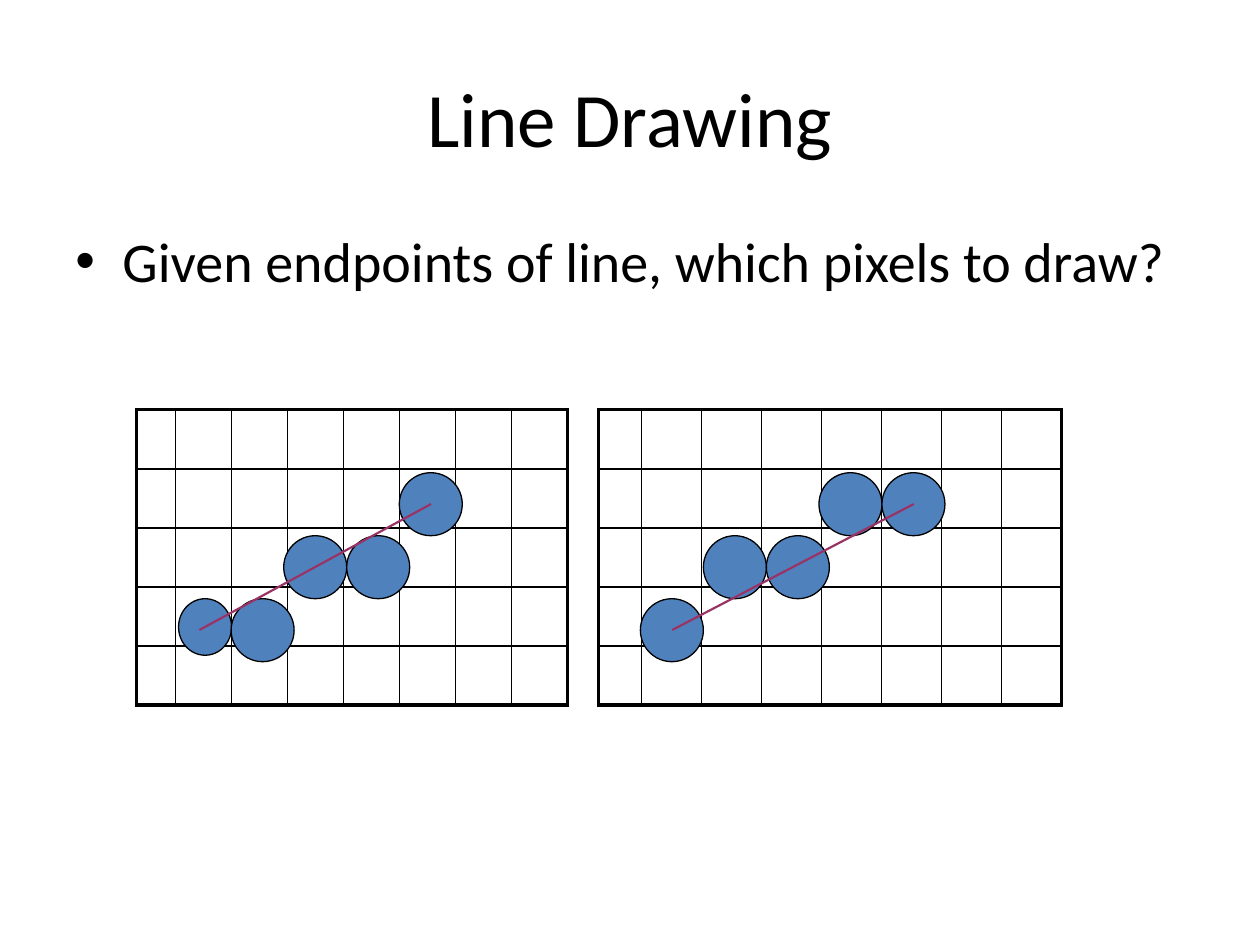
from dataclasses import dataclass

from lxml.etree import SubElement
from pptx import Presentation
from pptx.dml.color import RGBColor
from pptx.enum.shapes import MSO_CONNECTOR, MSO_SHAPE
from pptx.enum.text import MSO_ANCHOR, PP_ALIGN
from pptx.oxml.ns import qn
from pptx.util import Cm, Pt


@dataclass(frozen=True)
class Theme:
    font: str = "Calibri"
    ink: str = "000000"
    pixel: str = "4F81BD"
    line: str = "993366"
    title_size: float = 44
    body_size: float = 32
    body_space: float = 6.4
    frame_width: float = 2.25
    grid_width: float = 1
    outline_width: float = 0.75
    line_width: float = 1.25


theme = Theme()


def add_run(p, text, size):
    r = p.add_run()
    r.text = text
    r.font.name = theme.font
    r.font.size = Pt(size)
    r.font.color.rgb = RGBColor.from_string(theme.ink)


def set_border(cell, side, width):
    ln = SubElement(cell._tc.get_or_add_tcPr(), qn(f"a:ln{side}"), w=str(Pt(width)))
    fill = SubElement(ln, qn("a:solidFill"))
    SubElement(fill, qn("a:srgbClr"), val=theme.ink)


prs = Presentation()
prs.slide_width, prs.slide_height = Cm(25.4), Cm(19.05)
s = prs.slides.add_slide(prs.slide_layouts[5])

title = s.shapes.title
title.left, title.top, title.width, title.height = Cm(1.27), Cm(0.76), Cm(22.86), Cm(3.18)
tf = title.text_frame
tf.vertical_anchor = MSO_ANCHOR.MIDDLE
p = tf.paragraphs[0]
p.alignment = PP_ALIGN.CENTER
add_run(p, "Line Drawing", theme.title_size)

body = s.shapes.add_textbox(Cm(1.27), Cm(4.45), Cm(22.86), Cm(12.57))
tf = body.text_frame
tf.word_wrap = True
p = tf.paragraphs[0]
p.space_before = Pt(theme.body_space)
pPr = p._p.get_or_add_pPr()
pPr.set("marL", str(Cm(0.95)))
pPr.set("indent", str(Cm(-0.95)))
SubElement(pPr, qn("a:buFont"), typeface="Arial")
SubElement(pPr, qn("a:buChar"), char="•")
add_run(p, "Given endpoints of line, which pixels to draw?", theme.body_size)

rows, cols = 5, 8
row_height = 1.19
grid_top = 8.26
for left, first_col, other_col in [(2.75, 0.79, 1.13), (12.07, 0.86, 1.21)]:
    width = first_col + (cols - 1) * other_col
    frame = s.shapes.add_table(
        rows, cols, Cm(left), Cm(grid_top), Cm(width), Cm(rows * row_height)
    )
    table = frame.table
    table.first_row = table.horz_banding = False
    for c, column in enumerate(table.columns):
        column.width = Cm(other_col if c else first_col)
    for r, row in enumerate(table.rows):
        row.height = Cm(row_height)
        for c, cell in enumerate(row.cells):
            edges = {"L": c == 0, "R": c == cols - 1, "T": r == 0, "B": r == rows - 1}
            for side, outer in edges.items():
                set_border(cell, side, theme.frame_width if outer else theme.grid_width)
            cell.fill.background()

diameter = 1.27
pixel_top = 9.53
pixels = [(3.6, 2, 1.07, 1.14)]
pixels += [
    (left, level, diameter, diameter)
    for level, lefts in enumerate(
        [(8.05, 16.51, 17.78), (5.72, 6.99, 14.18, 15.45), (4.66, 12.91)]
    )
    for left in lefts
]
for left, level, width, height in pixels:
    sp = s.shapes.add_shape(
        MSO_SHAPE.OVAL, Cm(left), Cm(pixel_top + level * diameter), Cm(width), Cm(height)
    )
    sp.shadow.inherit = False
    sp.fill.solid()
    sp.fill.fore_color.rgb = RGBColor.from_string(theme.pixel)
    sp.line.color.rgb = RGBColor.from_string(theme.ink)
    sp.line.width = Pt(theme.outline_width)

for start, end in [(4.02, 8.69), (13.55, 18.42)]:
    line = s.shapes.add_connector(
        MSO_CONNECTOR.STRAIGHT, Cm(start), Cm(12.7), Cm(end), Cm(10.16)
    )
    line.line.color.rgb = RGBColor.from_string(theme.line)
    line.line.width = Pt(theme.line_width)
    SubElement(line._element.spPr, qn("a:effectLst"))

prs.save("out.pptx")
